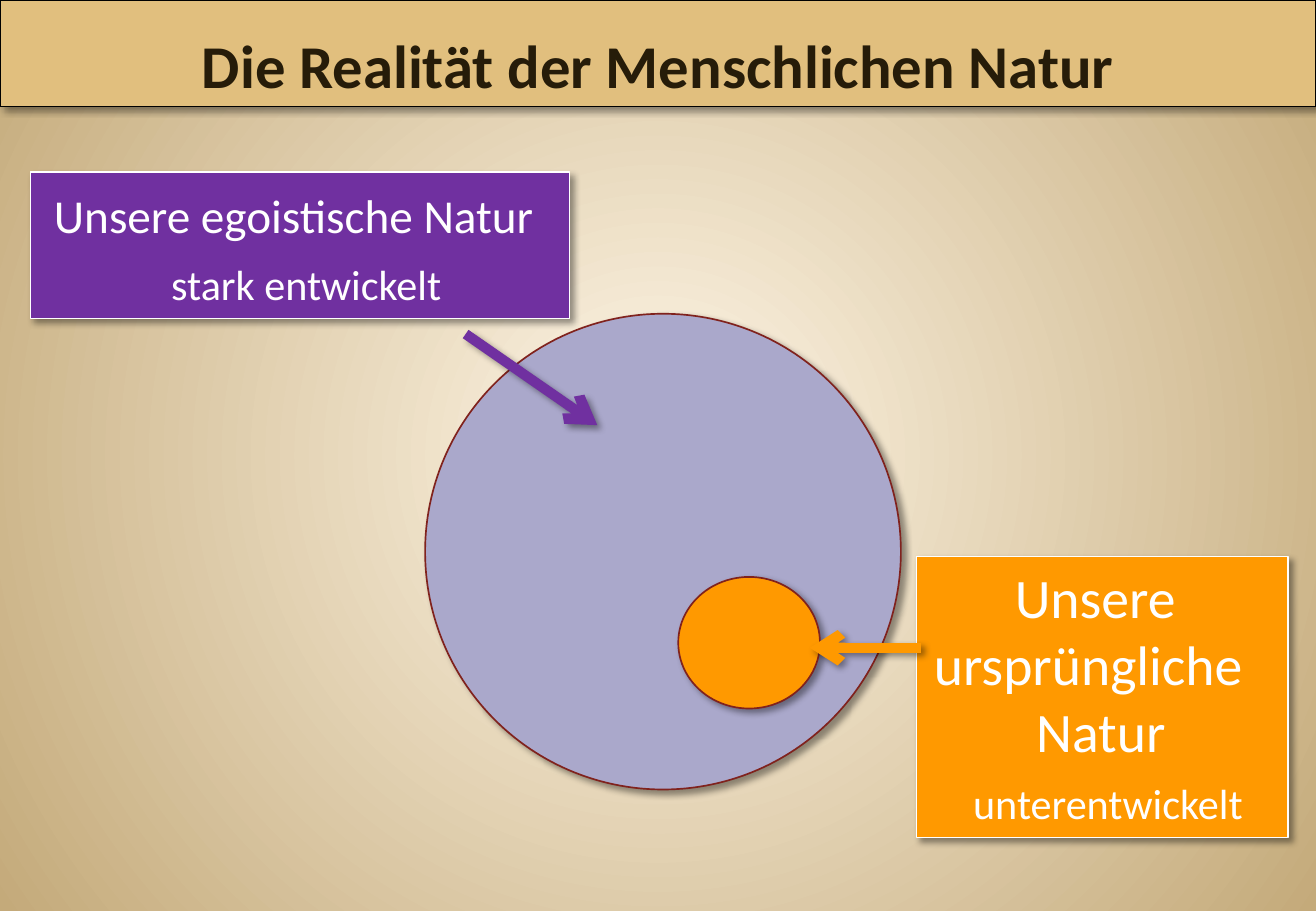
from dataclasses import dataclass

from lxml import etree
from pptx import Presentation
from pptx.dml.color import RGBColor
from pptx.enum.shapes import MSO_CONNECTOR, MSO_SHAPE
from pptx.enum.text import MSO_ANCHOR, MSO_AUTO_SIZE, PP_ALIGN
from pptx.oxml.ns import qn
from pptx.shapes.base import BaseShape
from pptx.slide import Slide
from pptx.util import Emu, Pt

RECTANGLE, OVAL = MSO_SHAPE.RECTANGLE, MSO_SHAPE.OVAL
STRAIGHT = MSO_CONNECTOR.STRAIGHT
TOP, BOTTOM = MSO_ANCHOR.TOP, MSO_ANCHOR.BOTTOM
CENTER = PP_ALIGN.CENTER
NO_AUTOFIT = MSO_AUTO_SIZE.NONE

FONT = "Calibri"
EMU_PER_PX = 9525
SLIDE_WIDTH, SLIDE_HEIGHT = 1040, 720
TITLE_HEIGHT = 84
TITLE_ONLY = 5

WHITE = RGBColor(0xFF, 0xFF, 0xFF)
BLACK = RGBColor(0x00, 0x00, 0x00)
CREAM = RGBColor(0xFF, 0xF7, 0xE8)
SAND = RGBColor(0xC4, 0xAA, 0x7A)
GOLD = RGBColor(0xE1, 0xBF, 0x7E)
DARK_BROWN = RGBColor(0x26, 0x1C, 0x09)
PURPLE = RGBColor(0x70, 0x30, 0xA0)
LAVENDER = RGBColor(0xAA, 0xA8, 0xCB)
ORANGE = RGBColor(0xFF, 0x99, 0x00)
DARK_RED = RGBColor(0x80, 0x22, 0x1D)


@dataclass(frozen=True)
class Line:
    text: str
    size: int
    indent: int = 0
    space_before: int = 0


@dataclass(frozen=True)
class Label:
    left: int
    top: int
    width: int
    height: int
    fill: RGBColor
    margin_top: int
    margin_right: int
    lines: tuple[Line, ...]


@dataclass(frozen=True)
class Circle:
    left: int
    top: int
    width: int
    height: int
    fill: RGBColor


@dataclass(frozen=True)
class Arrow:
    start: tuple[int, int]
    tip: tuple[int, int]
    color: RGBColor


LABELS = (
    Label(724, 440, 294, 222, ORANGE, 5, 22, (
        Line("Unsere", 33, indent=11),
        Line("ursprüngliche", 33),
        Line("Natur", 33, indent=20),
        Line("unterentwickelt", 25, indent=31, space_before=8),
    )),
    Label(24, 136, 426, 116, PURPLE, 11, 10, (
        Line("Unsere egoistische Natur", 28),
        Line("stark entwickelt", 25, indent=20, space_before=9),
    )),
)
CIRCLES = (
    Circle(336, 248, 376, 376, LAVENDER),
    Circle(536, 456, 112, 104, ORANGE),
)
ARROWS = (
    Arrow((368, 264), (472, 336), PURPLE),
    Arrow((728, 512), (640, 512), ORANGE),
)


def px(length: int) -> Emu:
    return Emu(length * EMU_PER_PX)


def add_shadow(shape: BaseShape) -> None:
    """Append the soft shadow; fill and line must already be set."""
    effects = etree.SubElement(shape.element.spPr, qn("a:effectLst"))
    shadow = etree.SubElement(
        effects, qn("a:outerShdw"), blurRad=str(int(Pt(4))), dist=str(int(Pt(3))),
        dir="2700000", algn="tl", rotWithShape="0")
    color = etree.SubElement(shadow, qn("a:srgbClr"), val=str(BLACK))
    etree.SubElement(color, qn("a:alpha"), val="40000")


def paint(shape: BaseShape, fill: RGBColor, outline: RGBColor, width: float) -> None:
    shape.fill.solid()
    shape.fill.fore_color.rgb = fill
    shape.line.color.rgb = outline
    shape.line.width = Pt(width)
    add_shadow(shape)


def set_background(slide: Slide) -> None:
    fill = slide.background.fill
    fill.gradient()
    for stop, color, position in zip(fill.gradient_stops, (CREAM, SAND), (0, 1)):
        stop.color.rgb = color
        stop.position = position
    gradient = slide.element.find(".//" + qn("a:gradFill"))
    gradient.remove(gradient.find(qn("a:lin")))
    circle = etree.SubElement(gradient, qn("a:path"), path="circle")
    etree.SubElement(circle, qn("a:fillToRect"), l="50000", t="50000", r="50000", b="50000")


def format_title(slide: Slide) -> None:
    title = slide.shapes.title
    title.left, title.top = px(0), px(0)
    title.width, title.height = px(SLIDE_WIDTH), px(TITLE_HEIGHT)
    paint(title, GOLD, BLACK, 0.75)
    frame = title.text_frame
    frame.text = "Die Realität der Menschlichen Natur"
    frame.auto_size = NO_AUTOFIT
    frame.vertical_anchor = BOTTOM
    heading = frame.paragraphs[0]
    heading.alignment = CENTER
    font = heading.runs[0].font
    font.name, font.size, font.bold = FONT, Pt(36), True
    font.color.rgb = DARK_BROWN


def add_label(slide: Slide, label: Label) -> None:
    box = slide.shapes.add_shape(
        RECTANGLE, px(label.left), px(label.top), px(label.width), px(label.height))
    paint(box, label.fill, WHITE, 0.75)
    frame = box.text_frame
    frame.word_wrap = True
    frame.vertical_anchor = TOP
    frame.margin_left, frame.margin_right = px(0), px(label.margin_right)
    frame.margin_top, frame.margin_bottom = px(label.margin_top), px(0)
    frame.text = "\n".join(line.text for line in label.lines)
    for paragraph, line in zip(frame.paragraphs, label.lines):
        paragraph.alignment = CENTER
        paragraph.space_before = Pt(line.space_before)
        paragraph._p.get_or_add_pPr().set("marL", str(int(px(line.indent))))
        font = paragraph.runs[0].font
        font.name, font.size = FONT, Pt(line.size)
        font.color.rgb = WHITE


def add_circle(slide: Slide, circle: Circle) -> None:
    oval = slide.shapes.add_shape(
        OVAL, px(circle.left), px(circle.top), px(circle.width), px(circle.height))
    paint(oval, circle.fill, DARK_RED, 1)


def add_arrow(slide: Slide, arrow: Arrow) -> None:
    connector = slide.shapes.add_connector(
        STRAIGHT, *map(px, arrow.start), *map(px, arrow.tip))
    connector.line.color.rgb = arrow.color
    connector.line.width = Pt(6)
    etree.SubElement(connector.element.spPr.find(qn("a:ln")), qn("a:tailEnd"), type="arrow")
    add_shadow(connector)


def main() -> None:
    presentation = Presentation()
    presentation.slide_width = px(SLIDE_WIDTH)
    presentation.slide_height = px(SLIDE_HEIGHT)
    slide = presentation.slides.add_slide(presentation.slide_layouts[TITLE_ONLY])
    set_background(slide)
    format_title(slide)
    for label in LABELS:
        add_label(slide, label)
    for circle, arrow in zip(CIRCLES, ARROWS):
        add_circle(slide, circle)
        add_arrow(slide, arrow)
    presentation.save("out.pptx")


if __name__ == "__main__":
    main()
